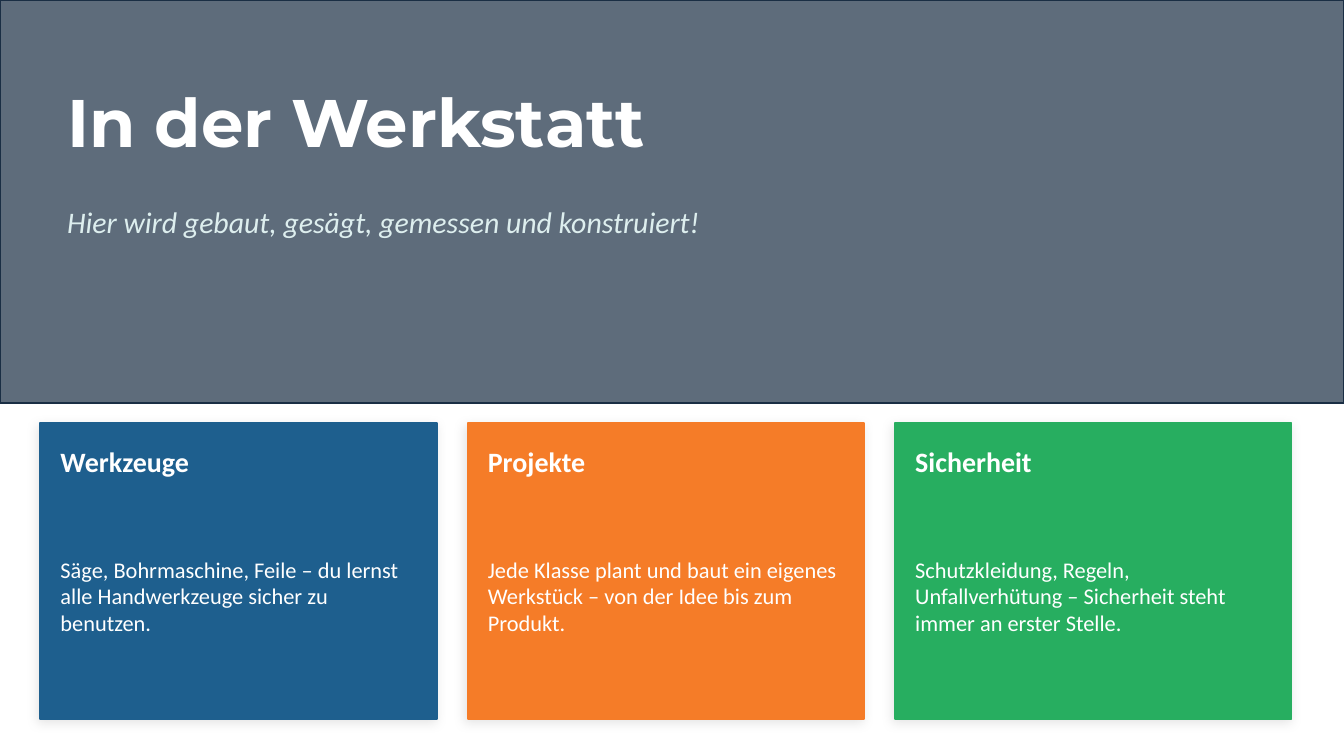
from dataclasses import dataclass

from lxml.etree import SubElement
from pptx import Presentation
from pptx.dml.color import RGBColor
from pptx.enum.shapes import MSO_SHAPE as Shape
from pptx.enum.text import MSO_ANCHOR as Anchor
from pptx.oxml.ns import qn
from pptx.util import Inches, Pt


@dataclass(frozen=True)
class Theme:
    navy: str = "1A2E44"
    blue: str = "1E5F8E"
    orange: str = "F57C28"
    green: str = "27AE60"
    white: str = "FFFFFF"
    pale: str = "DDEEEE"
    heading_font: str = "Montserrat"
    body_font: str = "Calibri"
    title_size: int = 36
    subtitle_size: int = 16
    card_title_size: int = 15
    card_body_size: int = 12


THEME = Theme()
CARDS = [
    ("Werkzeuge", THEME.blue,
     "Säge, Bohrmaschine, Feile – du lernst alle Handwerkzeuge sicher zu benutzen."),
    ("Projekte", THEME.orange,
     "Jede Klasse plant und baut ein eigenes Werkstück – von der Idee bis zum Produkt."),
    ("Sicherheit", THEME.green,
     "Schutzkleidung, Regeln, Unfallverhütung – Sicherheit steht immer an erster Stelle."),
]
CARD_LEFT, CARD_TOP, CARD_WIDTH, CARD_HEIGHT = 0.3, 3.15, 2.95, 2.2
CARD_PITCH = 3.18


def add_panel(slide, left, top, width, height, color):
    panel = slide.shapes.add_shape(
        Shape.RECTANGLE, Inches(left), Inches(top), Inches(width), Inches(height))
    panel.shadow.inherit = False
    panel.fill.solid()
    panel.fill.fore_color.rgb = panel.line.color.rgb = RGBColor.from_string(color)
    panel.line.width = Pt(1)
    return panel


def add_label(slide, left, top, width, height, text, size,
              color=THEME.white, font_name=THEME.body_font, bold=False, italic=False):
    label = slide.shapes.add_textbox(
        Inches(left), Inches(top), Inches(width), Inches(height))
    frame = label.text_frame
    frame.word_wrap = True
    frame.vertical_anchor = Anchor.MIDDLE
    frame.margin_left = frame.margin_right = frame.margin_top = frame.margin_bottom = 0
    frame.text = text
    font = frame.paragraphs[0].font
    font.name, font.size = font_name, Pt(size)
    font.bold, font.italic = bold, italic
    font.color.rgb = RGBColor.from_string(color)


def set_opacity(panel, percent):
    color = panel._element.spPr.find(qn("a:solidFill"))[0]
    SubElement(color, qn("a:alpha"), val=str(percent * 1000))


def add_soft_shadow(panel):
    effects = panel._element.spPr.find(qn("a:effectLst"))
    shadow = SubElement(effects, qn("a:outerShdw"), blurRad=str(Pt(6)), dist=str(Pt(2)),
                        dir=str(135 * 60000), algn="bl", rotWithShape="0")
    color = SubElement(shadow, qn("a:srgbClr"), val="000000")
    SubElement(color, qn("a:alpha"), val="10000")


def add_banner(slide, left, top, width, height):
    set_opacity(add_panel(slide, left, top, width, height, THEME.navy), 70)
    inset = 0.5
    add_label(slide, left + inset, top + 0.5, width - 2 * inset, 0.8,
              "In der Werkstatt", THEME.title_size,
              font_name=THEME.heading_font, bold=True)
    add_label(slide, left + inset, top + 1.4, width - 2 * inset, 0.5,
              "Hier wird gebaut, gesägt, gemessen und konstruiert!",
              THEME.subtitle_size, color=THEME.pale, italic=True)


def add_card(slide, left, top, width, height, title, color, body):
    add_soft_shadow(add_panel(slide, left, top, width, height, color))
    inset = 0.15
    add_label(slide, left + inset, top + 0.07, width - 2 * inset, 0.42,
              title, THEME.card_title_size, bold=True)
    add_label(slide, left + inset, top + 0.51, width - 2 * inset, height - 0.65,
              body, THEME.card_body_size)


def main():
    deck = Presentation()
    deck.slide_width = Inches(10)
    deck.slide_height = deck.slide_width * 9 // 16
    slide = deck.slides.add_slide(deck.slide_layouts[6])
    add_banner(slide, 0, 0, 10, 3)
    for index, card in enumerate(CARDS):
        add_card(slide, CARD_LEFT + index * CARD_PITCH, CARD_TOP,
                 CARD_WIDTH, CARD_HEIGHT, *card)
    deck.save("out.pptx")


if __name__ == "__main__":
    main()
